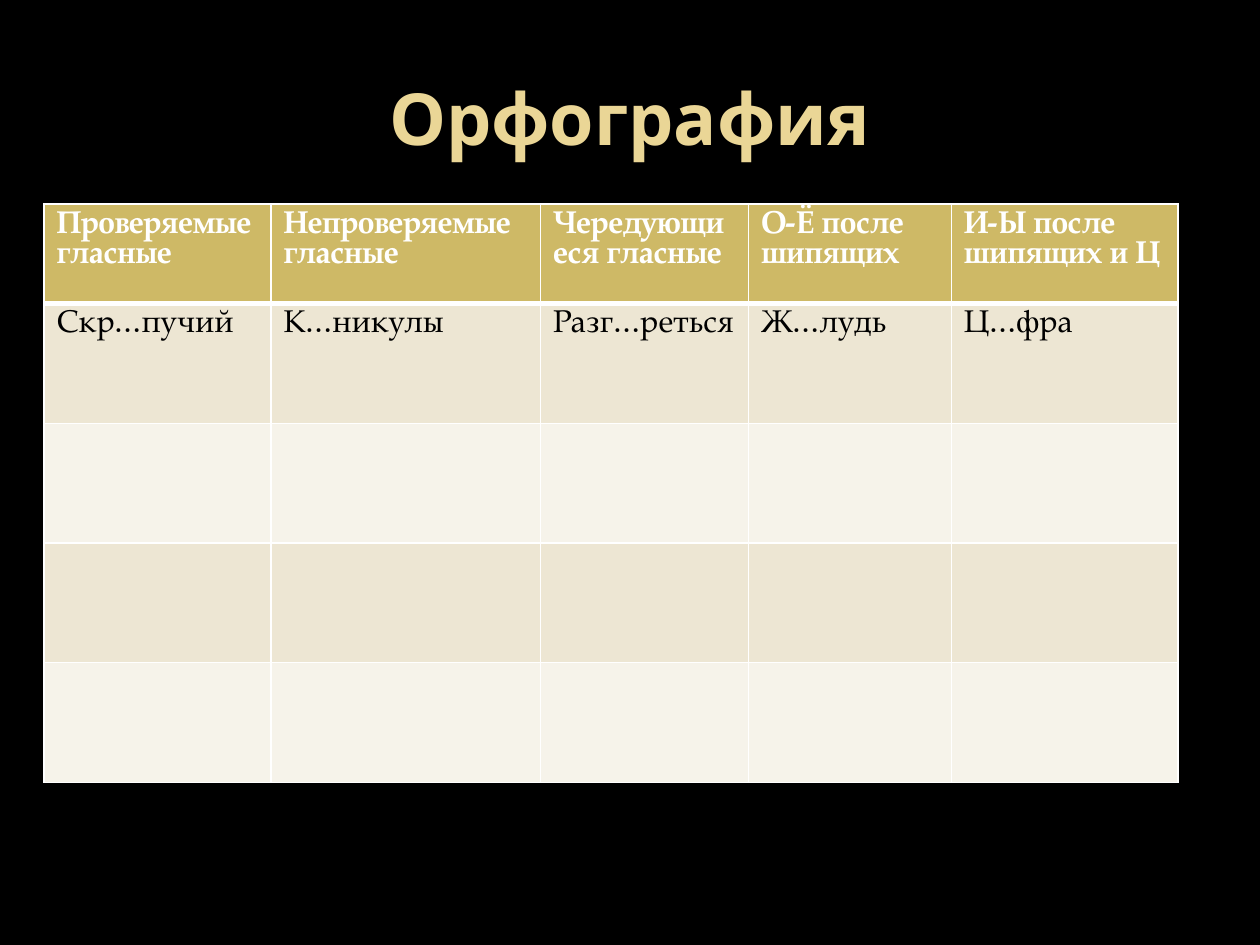
from dataclasses import dataclass

from lxml.etree import SubElement
from pptx import Presentation
from pptx.dml.color import RGBColor
from pptx.enum.text import MSO_ANCHOR as Anchor, MSO_AUTO_SIZE as AutoSize, PP_ALIGN as Align
from pptx.oxml.ns import qn
from pptx.slide import Slide
from pptx.table import _Cell as Cell
from pptx.util import Inches, Pt

BLACK = RGBColor(0x00, 0x00, 0x00)
WHITE = RGBColor(0xFF, 0xFF, 0xFF)
TITLE_GOLD = RGBColor(0xEA, 0xD6, 0x96)
HEADER_GOLD = RGBColor(0xCE, 0xB9, 0x66)
BANDS = (RGBColor(0xED, 0xE6, 0xD3), RGBColor(0xF6, 0xF3, 0xEA))

TITLE_FONT = "Open Sans"
TABLE_FONT = "TeX Gyre Pagella"
WIDTH, HEIGHT = Inches(10), Inches(7.5)
HEADER_HEIGHT, BODY_HEIGHT = Inches(0.79), Inches(0.95)
BODY_ROWS = 4
THIN, THICK = 1, 3


@dataclass(frozen=True)
class Column:
    share: float
    heading: str
    example: str


COLUMNS = (
    Column(0.18, "Проверяемые\nгласные", "Скр…пучий"),
    Column(0.214, "Непроверяемые гласные", "К…никулы"),
    Column(0.165, "Чередующиеся гласные", "Разг…реться"),
    Column(0.161, "О-Ё после\nшипящих", "Ж…лудь"),
    Column(0.18, "И-Ы после шипящих и Ц", "Ц…фра"),
)


def set_borders(cell: Cell, top: int, bottom: int) -> None:
    properties = cell._tc.get_or_add_tcPr()
    sides = {"lnL": THIN, "lnR": THIN, "lnT": top, "lnB": bottom}
    for position, (side, points) in enumerate(sides.items()):
        line = SubElement(properties, qn(f"a:{side}"), w=str(Pt(points)))
        fill = SubElement(line, qn("a:solidFill"))
        SubElement(fill, qn("a:srgbClr"), val=str(WHITE))
        properties.insert(position, line)


def fill_cell(cell: Cell, text: str, row: int) -> None:
    is_header = row == 0
    cell.text = text
    cell.fill.solid()
    cell.fill.fore_color.rgb = HEADER_GOLD if is_header else BANDS[(row - 1) % 2]
    set_borders(cell, THICK if row == 1 else THIN, THICK if is_header else THIN)
    for para in cell.text_frame.paragraphs:
        para.font.name = TABLE_FONT
        para.font.size = Pt(18)
        para.font.bold = is_header
        para.font.color.rgb = WHITE if is_header else BLACK


def add_title(page: Slide, text: str) -> None:
    title = page.shapes.title
    title.left, title.top = int(WIDTH * 0.05), int(HEIGHT * 0.04)
    title.width, title.height = int(WIDTH * 0.9), Inches(1.25)
    frame = title.text_frame
    frame.text = text
    frame.auto_size = AutoSize.NONE
    frame.vertical_anchor = Anchor.MIDDLE
    para = frame.paragraphs[0]
    para.alignment = Align.CENTER
    para.font.name = TITLE_FONT
    para.font.size = Pt(41)
    para.font.bold = True
    para.font.color.rgb = TITLE_GOLD


def add_spelling_table(page: Slide) -> None:
    table = page.shapes.add_table(
        BODY_ROWS + 1, len(COLUMNS), int(WIDTH * 0.035), Inches(1.62),
        int(WIDTH * 0.9), HEADER_HEIGHT + BODY_ROWS * BODY_HEIGHT,
    ).table
    for row_number, row in enumerate(table.rows):
        row.height = BODY_HEIGHT if row_number else HEADER_HEIGHT
    for column_number, column in enumerate(COLUMNS):
        table.columns[column_number].width = int(WIDTH * column.share)
        texts = [column.heading, column.example] + [""] * (BODY_ROWS - 1)
        for row_number, text in enumerate(texts):
            fill_cell(table.cell(row_number, column_number), text, row_number)


def main() -> None:
    deck = Presentation()
    deck.slide_width, deck.slide_height = WIDTH, HEIGHT
    page = deck.slides.add_slide(deck.slide_layouts[5])
    page.background.fill.solid()
    page.background.fill.fore_color.rgb = BLACK
    add_title(page, "Орфография")
    add_spelling_table(page)
    deck.save("out.pptx")


if __name__ == "__main__":
    main()
